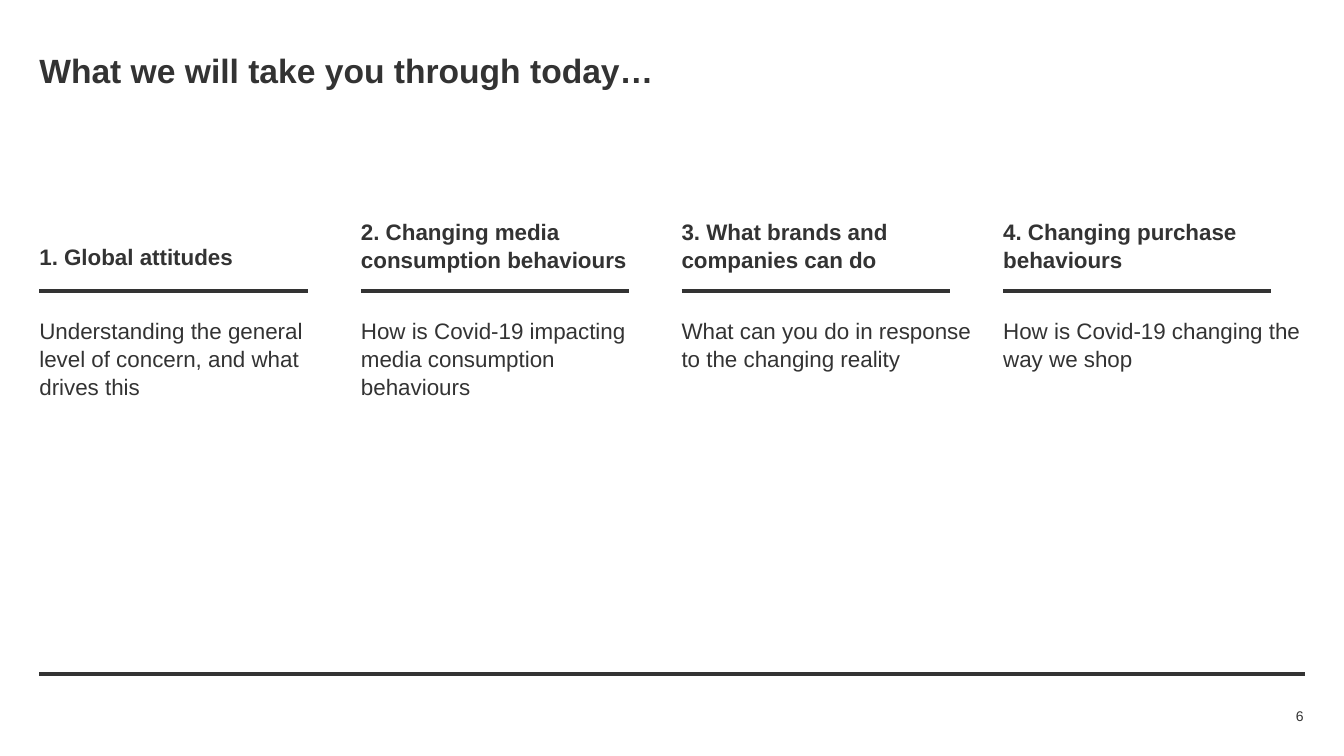
from lxml import etree
from pptx import Presentation
from pptx.dml.color import RGBColor
from pptx.enum.shapes import MSO_CONNECTOR
from pptx.enum.text import MSO_ANCHOR as Anchor, PP_ALIGN as Align
from pptx.oxml.ns import qn
from pptx.util import Inches, Pt

INK = "333333"
MARGIN = 0.39
COLUMN_STEP = 3.187
COLUMN_WIDTH = 2.98

prs = Presentation()
prs.slide_width = Inches(13.33)
prs.slide_height = Inches(7.5)
slide = prs.slides.add_slide(prs.slide_layouts[6])


def add_text(text, left, top, width, height, size=16, bold=False,
             align=Align.LEFT, anchor=Anchor.TOP, spacing=1.03):
    frame = slide.shapes.add_textbox(
        Inches(left), Inches(top), Inches(width), Inches(height)).text_frame
    frame.word_wrap = True
    frame.margin_left = frame.margin_right = 0
    frame.margin_top = frame.margin_bottom = 0
    frame.vertical_anchor = anchor
    paragraph = frame.paragraphs[0]
    paragraph.alignment = align
    paragraph.line_spacing = spacing
    run = paragraph.add_run()
    run.text = text
    run.font.name = "Arial"
    run.font.size = Pt(size)
    run.font.bold = bold
    run.font.color.rgb = RGBColor.from_string(INK)


def add_rule(left, right, y):
    rule = slide.shapes.add_connector(
        MSO_CONNECTOR.STRAIGHT, Inches(left), Inches(y), Inches(right), Inches(y))
    rule.line.color.rgb = RGBColor.from_string(INK)
    rule.line.width = Pt(3)
    etree.SubElement(rule._element.spPr, qn("a:effectLst"))


add_rule(MARGIN, 12.94, 6.69)
add_text("What we will take you through today…", MARGIN, 0.47, 12.54, 0.44,
         size=24, bold=True, anchor=Anchor.MIDDLE)

topics = [
    ("1. Global attitudes", 2.4, 0.31,
     "Understanding the general level of concern, and what drives this"),
    ("2. Changing media consumption behaviours", 2.16, 0.66,
     "How is Covid-19 impacting media consumption behaviours"),
    ("3. What brands and companies can do", 2.16, 0.66,
     "What can you do in response to the changing reality"),
    ("4. Changing purchase behaviours", 2.16, 0.66,
     "How is Covid-19 changing the way we shop"),
]
for column, (heading, heading_top, heading_height, summary) in enumerate(topics):
    left = round(MARGIN + column * COLUMN_STEP, 2)
    add_text(heading, left, heading_top, COLUMN_WIDTH, heading_height, bold=True)
    add_text(summary, left, 3.14, COLUMN_WIDTH, 2.99)
    add_rule(left, left + 2.66, 2.89)

add_text("6", 11.87, 6.99, 1.06, 0.22, size=10, align=Align.RIGHT,
         anchor=Anchor.MIDDLE, spacing=1.0)

prs.save("out.pptx")
